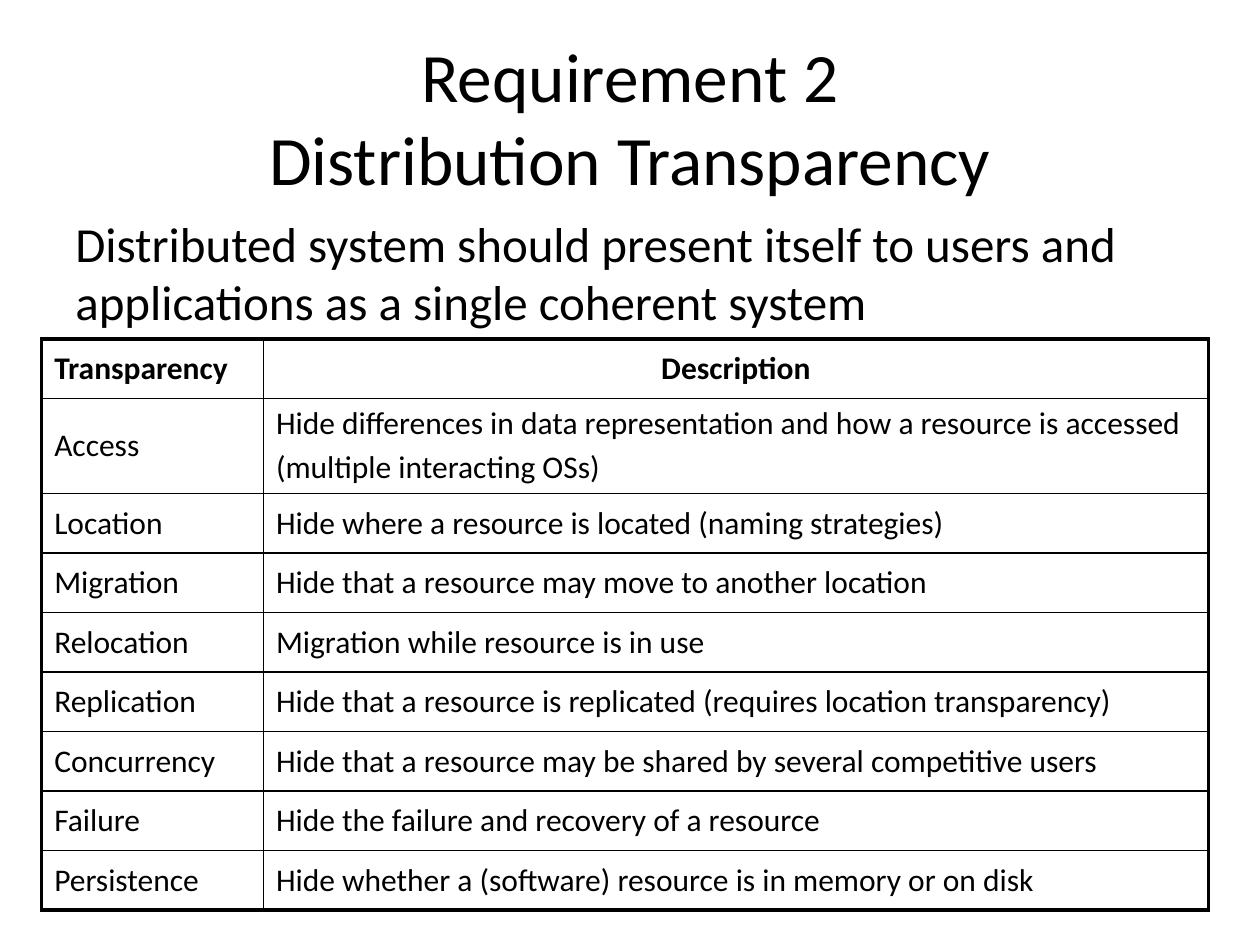
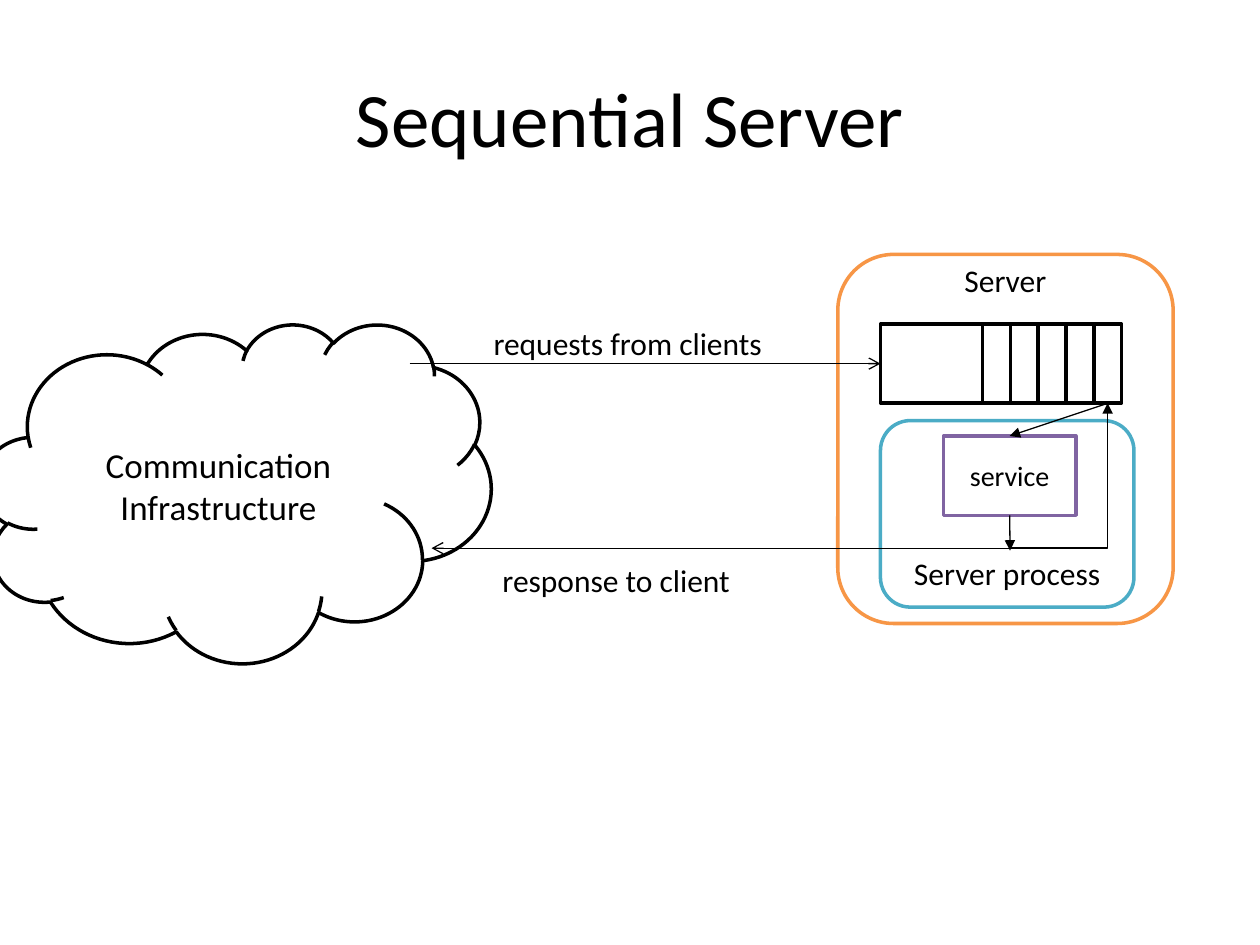
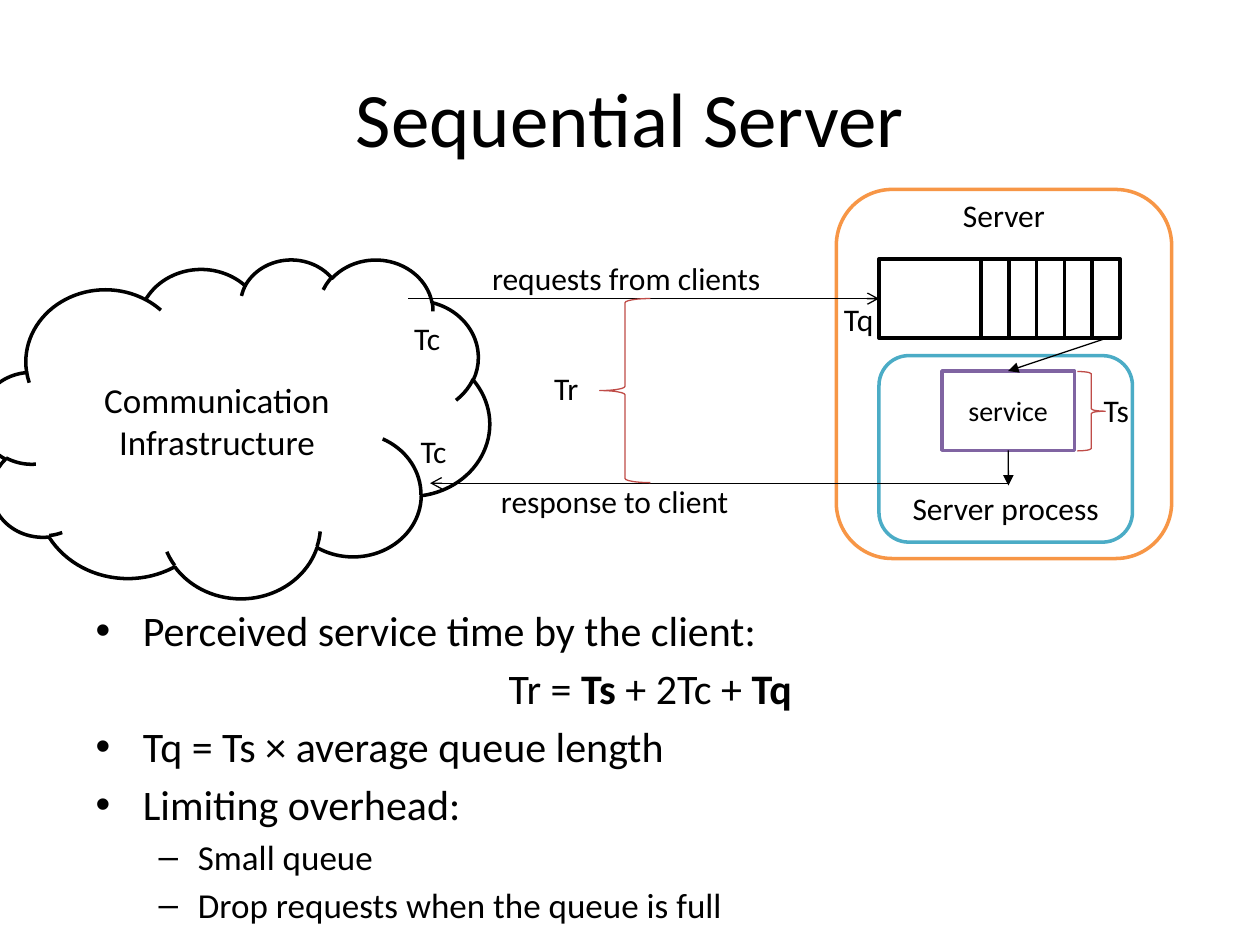
from lxml import etree
from pptx import Presentation
from pptx.dml.color import RGBColor
from pptx.enum.shapes import MSO_CONNECTOR, MSO_SHAPE
from pptx.enum.text import MSO_ANCHOR, MSO_AUTO_SIZE, PP_ALIGN
from pptx.oxml.ns import qn
from pptx.util import Cm, Pt

BLACK = RGBColor(0x00, 0x00, 0x00)
WHITE = RGBColor(0xFF, 0xFF, 0xFF)
ORANGE = RGBColor(0xF7, 0x96, 0x46)
TEAL = RGBColor(0x4B, 0xAC, 0xC6)
PURPLE = RGBColor(0x80, 0x64, 0xA2)
RED = RGBColor(0xBF, 0x4C, 0x48)
FONT = "Calibri"
STRAIGHT, ELBOW = MSO_CONNECTOR.STRAIGHT, MSO_CONNECTOR.ELBOW
RECT, ROUND, CLOUD = MSO_SHAPE.RECTANGLE, MSO_SHAPE.ROUNDED_RECTANGLE, MSO_SHAPE.CLOUD
LEFT_BRACE, RIGHT_BRACE = MSO_SHAPE.LEFT_BRACE, MSO_SHAPE.RIGHT_BRACE
TOP, MIDDLE, BOTTOM = MSO_ANCHOR.TOP, MSO_ANCHOR.MIDDLE, MSO_ANCHOR.BOTTOM
LEFT, CENTER = PP_ALIGN.LEFT, PP_ALIGN.CENTER
NO_FIT = MSO_AUTO_SIZE.NONE
SIDE_TOP, SIDE_LEFT, SIDE_BOTTOM = 0, 1, 2

TITLE_BOX = (1.27, 0.76, 22.86, 3.18)
SPACING = 0.18
THICK, THIN = 2.25, 1

INTRO = ("Distributed system should present itself to users and "
         "applications as a single coherent system")
TRANSPARENCIES = [
    ("Transparency", ["Description"]),
    ("Access", ["Hide differences in data representation and how a resource is accessed",
                "(multiple interacting OSs)"]),
    ("Location", ["Hide where a resource is located (naming strategies)"]),
    ("Migration", ["Hide that a resource may move to another location"]),
    ("Relocation", ["Migration while resource is in use"]),
    ("Replication", ["Hide that a resource is replicated (requires location transparency)"]),
    ("Concurrency", ["Hide that a resource may be shared by several competitive users"]),
    ("Failure", ["Hide the failure and recovery of a resource"]),
    ("Persistence", ["Hide whether a (software) resource is in memory or on disk"]),
]
COLUMN_WIDTHS = (4.47, 19.05)
ROW_HEIGHTS = {1: 1.2, 2: 1.9}

BULLET = {"size": 24, "bullet": ("•", 0.95, -0.95)}
DASH = {"size": 20, "bullet": ("–", 2.06, -0.79)}
FORMULA = {"size": 24, "align": CENTER}
TIMING_NOTES = [
    (["Perceived service time by the client:"], BULLET),
    (["Tr = ", "*Ts", " + 2Tc + ", "*Tq"], FORMULA),
    (["Tq = Ts × average queue length"], BULLET),
    (["Limiting overhead:"], BULLET),
    (["Small queue"], DASH),
    (["Drop requests when the queue is full"], DASH),
]
TIMES = [
    ("Tr", 10.92, 7.32, 1.04), ("Ts", 22.0, 7.75, 1.27), ("Tc", 8.1, 6.3, 1.55),
    ("Tc", 8.23, 8.59, 1.55), ("Tq", 16.76, 5.92, 1.4),
]
BRACES = [(LEFT_BRACE, (12.09, 6.02, 1.02, 3.71)), (RIGHT_BRACE, (21.72, 7.49, 0.56, 1.6))]


def cm(*values):
    """Turn centimetres into lengths."""
    return [Cm(v) for v in values]


def apply(obj, values):
    """Set each named attribute."""
    for name, value in values.items():
        setattr(obj, name, value)


def write(p, runs, size=18, align=LEFT, bold=False, spacing=0, line_spacing=None, bullet=None):
    """Fill a paragraph; a run that starts with an asterisk is bold."""
    apply(p, {"alignment": align, "space_before": Pt(round(spacing * size, 1)),
              "line_spacing": line_spacing})
    for text in runs:
        r = p.add_run()
        r.text = text.lstrip("*")
        apply(r.font, {"name": FONT, "size": Pt(size), "bold": bold or text.startswith("*")})
        r.font.color.rgb = BLACK
    if bullet:
        mark, margin, indent = bullet
        pPr = p._p.get_or_add_pPr()
        apply_xml = {"marL": Cm(margin), "indent": Cm(indent)}
        for name, value in apply_xml.items():
            pPr.set(name, str(int(value)))
        etree.SubElement(pPr, qn("a:buFont"), typeface="Arial")
        etree.SubElement(pPr, qn("a:buChar"), char=mark)


def write_all(tf, paragraphs):
    """Write one paragraph for each pair of runs and format."""
    for i, (runs, fmt) in enumerate(paragraphs):
        write(tf.add_paragraph() if i else tf.paragraphs[0], runs, **fmt)


def add_slide(prs, title, size=44):
    """Add a title-only slide."""
    s = prs.slides.add_slide(prs.slide_layouts[5])
    sp = s.shapes.title
    apply(sp, dict(zip(("left", "top", "width", "height"), cm(*TITLE_BOX))))
    tf = sp.text_frame
    apply(tf, {"auto_size": NO_FIT, "vertical_anchor": MIDDLE})
    first, *rest = title
    write(tf.paragraphs[0], [first], size, CENTER)
    for line in rest:
        tf.paragraphs[0].add_line_break()
        write(tf.paragraphs[0], [line], size, CENTER)
    return s


def add_text(s, box, paragraphs, wrap=True):
    """Add a text box."""
    tf = s.shapes.add_textbox(*cm(*box)).text_frame
    apply(tf, {"word_wrap": wrap, "auto_size": NO_FIT})
    write_all(tf, paragraphs)


def add_box(s, kind, box, color=BLACK, lines=(), anchor=MIDDLE, width=2, filled=True, **fmt):
    """Add an outlined shape with centred text."""
    sp = s.shapes.add_shape(kind, *cm(*box))
    sp.shadow.inherit = False
    if filled:
        sp.fill.solid()
        sp.fill.fore_color.rgb = WHITE
    else:
        sp.fill.background()
    sp.line.color.rgb = color
    sp.line.width = Pt(width)
    sp.text_frame.vertical_anchor = anchor
    write_all(sp.text_frame, [([line], {"align": CENTER, **fmt}) for line in lines])
    return sp


def add_arrow(s, start, end, head="triangle", begin=None, finish=None, kind=STRAIGHT):
    """Add an arrow, joined to the given shapes and sides."""
    c = s.shapes.add_connector(kind, *cm(*start, *end))
    if begin:
        c.begin_connect(*begin)
    if finish:
        c.end_connect(*finish)
    c.line.color.rgb = BLACK
    c.line.width = Pt(0.75)
    etree.SubElement(c.line._get_or_add_ln(), qn("a:tailEnd"), type=head)
    etree.SubElement(c._element.spPr, qn("a:effectLst"))
    return c


def add_server(s, dx=0, dy=0, response_top=11.18, loop=False):
    """Draw the cloud, the queue and the server, moved by dx and dy."""
    def at(x, y, *size):
        return (x + dx, y + dy, *size)

    add_box(s, CLOUD, at(-0.36, 6.53, 10.26, 6.83),
            lines=("Communication", "Infrastructure"), size=20)
    add_box(s, ROUND, at(16.89, 5.13, 6.76, 7.44), ORANGE, ["Server"], TOP, line_spacing=0.5)
    process = add_box(s, ROUND, at(17.75, 8.48, 5.11, 3.76), TEAL, ["Server process"], BOTTOM)
    process.adjustments[0] = 0.16
    queue = add_box(s, RECT, at(17.75, 6.53, 2.06, 1.6))
    slots = [add_box(s, RECT, at(19.81 + 0.56 * i, 6.53, 0.56, 1.6)) for i in range(5)]
    service = add_box(s, RECT, at(19.02, 8.79, 2.67, 1.6), PURPLE, ["service"], size=16)

    add_arrow(s, at(8.26, 7.33), at(17.75, 7.33), "arrow", finish=(queue, SIDE_LEFT))
    add_text(s, at(9.7, 6.4, 6.02, 1.02), [(["requests from clients"], {})], wrap=False)
    add_arrow(s, at(20.36, 11.05), at(8.7, 11.05), "arrow")
    add_text(s, at(9.88, response_top, 5.18, 1.02), [(["response to client"], {})], wrap=False)
    add_arrow(s, at(22.33, 8.13), at(20.36, 8.79),
              begin=(slots[-1], SIDE_BOTTOM), finish=(service, SIDE_TOP))
    add_arrow(s, at(20.36, 10.39), at(20.36, 11.1), begin=(service, SIDE_BOTTOM))
    if loop:
        c = add_arrow(s, at(20.36, 11.05), at(22.33, 8.13), kind=ELBOW)
        c._element.spPr.find(qn("a:prstGeom")).set("prst", "bentConnector2")


def set_borders(cell, widths):
    """Draw the four borders of a cell."""
    tcPr = cell._tc.get_or_add_tcPr()
    for i, (side, width) in enumerate(widths.items()):
        ln = etree.Element(qn(f"a:{side}"), w=str(int(Pt(width))))
        fill = etree.SubElement(ln, qn("a:solidFill"))
        etree.SubElement(fill, qn("a:srgbClr"), val=str(BLACK))
        tcPr.insert(i, ln)


def add_transparency_table(s):
    """Add the table of kinds of transparency."""
    heights = [ROW_HEIGHTS[len(lines)] for _, lines in TRANSPARENCIES]
    last = len(heights) - 1
    frame = s.shapes.add_table(last + 1, 2, *cm(0.84, 6.83, sum(COLUMN_WIDTHS), sum(heights)))
    table = frame.table
    for column, width in zip(table.columns, COLUMN_WIDTHS):
        column.width = Cm(width)
    for i, (name, lines) in enumerate(TRANSPARENCIES):
        table.rows[i].height = Cm(heights[i])
        for j, texts in enumerate(([name], lines)):
            cell = table.cell(i, j)
            cell.vertical_anchor = MIDDLE
            cell.fill.solid()
            cell.fill.fore_color.rgb = WHITE
            fmt = {"bold": i == 0, "spacing": SPACING, "align": LEFT if i or not j else CENTER}
            write_all(cell.text_frame, [([t], fmt) for t in texts])
            outer = {"lnL": j == 0, "lnR": j == 1, "lnT": i == 0, "lnB": i == last}
            set_borders(cell, {k: THICK if edge else THIN for k, edge in outer.items()})


def main():
    """Build the three slides."""
    prs = Presentation()
    prs.slide_width, prs.slide_height = cm(25.4, 19.05)

    s = add_slide(prs, ["Requirement 2", "Distribution Transparency"], 39.6)
    add_text(s, (1.27, 4.17, 22.86, 2.39), [([INTRO], {"size": 28, "spacing": SPACING})])
    add_transparency_table(s)

    s = add_slide(prs, ["Sequential Server"])
    add_server(s, loop=True)

    s = add_slide(prs, ["Sequential Server"])
    add_server(s, -0.03, -1.31, response_top=10.91)
    for kind, box in BRACES:
        add_box(s, kind, box, RED, width=0.75, filled=False)
    for name, x, y, width in TIMES:
        add_text(s, (x, y, width, 1.02), [([name], {})])
    add_text(s, (1.68, 12.07, 22.86, 6.55),
             [(runs, {**fmt, "spacing": SPACING}) for runs, fmt in TIMING_NOTES])

    prs.save("out.pptx")


if __name__ == "__main__":
    main()
